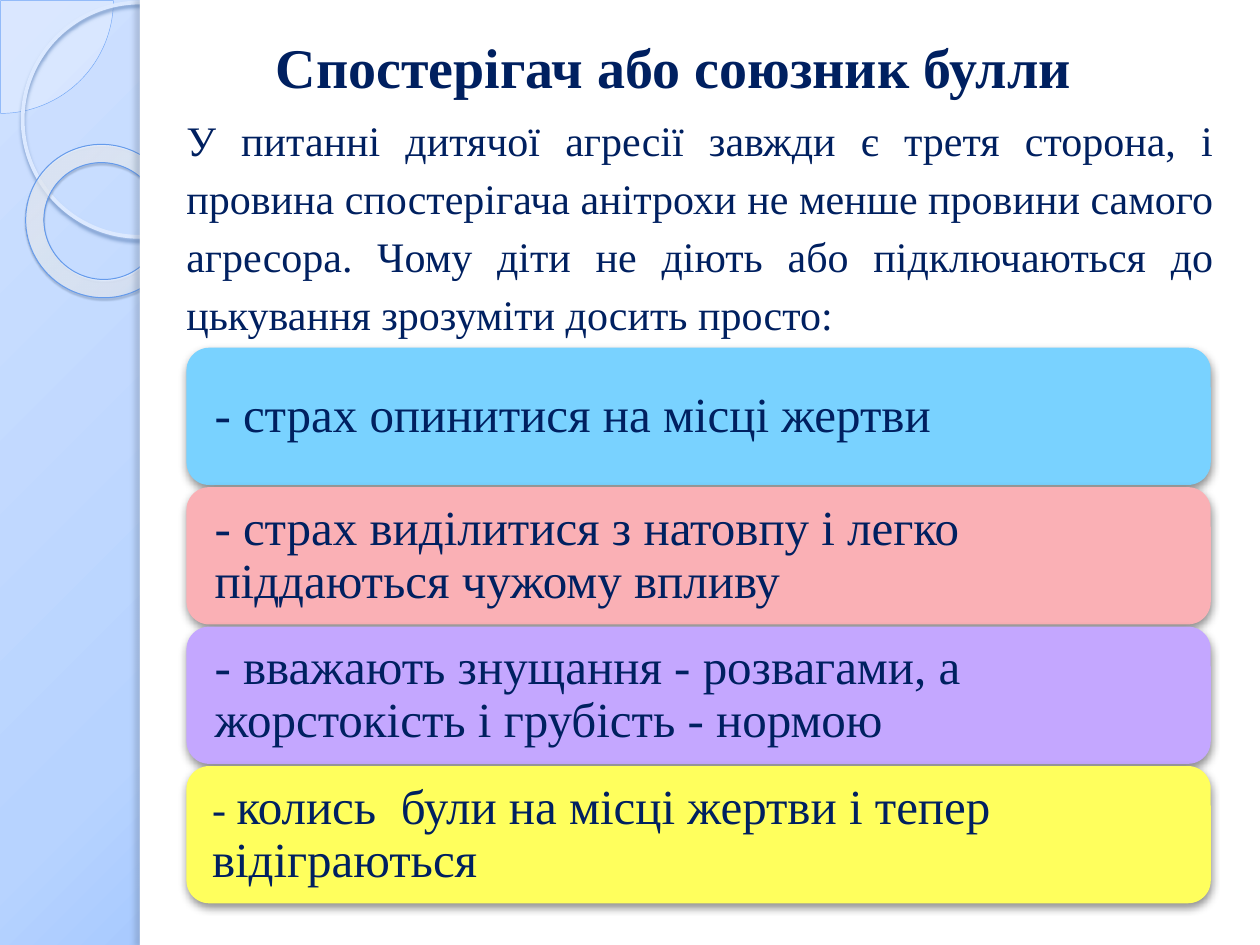
from dataclasses import dataclass
from pptx import Presentation
from pptx.dml.color import RGBColor
from pptx.enum.shapes import MSO_SHAPE as Kind
from pptx.enum.text import MSO_ANCHOR as Anchor, MSO_AUTO_SIZE as Fit, PP_ALIGN as Align
from pptx.oxml import parse_xml
from pptx.oxml.ns import nsdecls, qn
from pptx.util import Inches, Pt


@dataclass(frozen=True)
class Theme:
    font: str = "Times New Roman"
    ink: str = "002060"
    page: str = "FFFFFF"
    head: int = 32
    body: int = 24
    item: int = 28
    cards: tuple = ("79D2FF", "FAB0B5", "C4A7FF", "FFFF5D")
    sky: tuple = ((0, "CFE1FF", 100), (40, "B7D3FF", 100), (100, "4991FB", 100))
    ring: tuple = ((0, "F5F9FF", 70), (70, "FBFCFF", 55), (100, "75ACFF", 60))
    pie: str = "F2F6FF"
    edge: tuple = ("72A7F6", 0.25)
    hoop: tuple = ("DCE9FF", 2.15)
    rim: tuple = ("659BEC", 0.58)
    # Shadows: colour, opacity, blur, distance, angle
    glow: tuple = ("7193C6", 85, 2, 2, 90)
    soft: tuple = ("31486A", 35, 1, 1.2, 75)
    side: tuple = ("54647E", 25, 3, 3, 180)
    drop: tuple = ("000000", 43, 5, 2, 90)


@dataclass(frozen=True)
class Box:
    x: float
    y: float
    w: float
    h: float

    def cut(self, x, y, w, h):
        """Return a part of the box, given in percent of its sides."""
        return Box(self.x + self.w * x / 100, self.y + self.h * y / 100,
                   self.w * w / 100, self.h * h / 100)

    def place(self):
        return [Inches(v) for v in (self.x, self.y, self.w, self.h)]


THEME = Theme()
PAGE = Box(0, 0, 10, 7.5)
TITLE = "Спостерігач або союзник булли"
INTRO = ("У питанні дитячої агресії завжди є третя сторона, і провина спостерігача "
         "анітрохи не менше провини самого агресора. Чому діти не діють або "
         "підключаються до цькування зрозуміти досить просто:")
# Each item: size of the dash, side inset, words
ITEMS = (
    (THEME.item, 0.17, "страх опинитися на місці жертви"),
    (THEME.item, 0.17, "страх виділитися з натовпу і легко піддаються чужому впливу"),
    (THEME.item, 0.17, "вважають знущання - розвагами, а жорстокість і грубість - нормою"),
    (THEME.body, 0.15, "колись  були на місці жертви і тепер відіграються"),
)


def put(obj, **vals):
    for key, val in vals.items():
        setattr(obj, key, val)


def tint(hue, alpha):
    return f'<a:srgbClr val="{hue}"><a:alpha val="{alpha * 1000}"/></a:srgbClr>'


def blend(host, fill, stops, rect):
    """Fill with a round gradient; rect holds its centre edges in percent."""
    fill.gradient()
    old = host.element.find(".//" + qn("a:gradFill"))
    marks = "".join(f'<a:gs pos="{pos * 1000}">{tint(hue, alpha)}</a:gs>'
                    for pos, hue, alpha in stops)
    edges = " ".join(f'{side}="{val * 1000}"' for side, val in zip("ltrb", rect))
    old.getparent().replace(old, parse_xml(
        f'<a:gradFill {nsdecls("a")} rotWithShape="1"><a:gsLst>{marks}</a:gsLst>'
        f'<a:path path="circle"><a:fillToRect {edges}/></a:path></a:gradFill>'))


def shade(shape, hue, alpha, blur, dist, angle):
    old = shape.element.spPr.find(qn("a:effectLst"))
    old.append(parse_xml(
        f'<a:outerShdw {nsdecls("a")} blurRad="{Pt(blur)}" dist="{Pt(dist)}" '
        f'dir="{angle * 60000}" algn="tl" rotWithShape="0">{tint(hue, alpha)}</a:outerShdw>'))


def draw(slide, kind, box, fill=None, line=None, shadow=None, adj=()):
    shape = slide.shapes.add_shape(kind, *box.place())
    shape.shadow.inherit = False
    for i, val in enumerate(adj):
        shape.adjustments[i] = val
    if fill:
        shape.fill.solid()
        shape.fill.fore_color.rgb = RGBColor.from_string(fill)
    else:
        shape.fill.background()
    if line:
        shape.line.color.rgb = RGBColor.from_string(line[0])
        shape.line.width = Pt(line[1])
    else:
        shape.line.fill.background()
    if shadow:
        shade(shape, *shadow)
    return shape


def write(frame, runs, para, bold=None):
    """Fill the first paragraph with (words, size) runs."""
    line = frame.paragraphs[0]
    put(line, **para)
    for words, size in runs:
        run = line.add_run()
        run.text = words
        put(run.font, name=THEME.font, size=Pt(size), bold=bold)
        run.font.color.rgb = RGBColor.from_string(THEME.ink)


def side_art(slide, box):
    pie = draw(slide, Kind.PIE, box.cut(-80.2, -11.87, 161.3, 23.87),
               THEME.pie, THEME.edge, adj=(0, 54.02))
    hue = pie.element.spPr.find(qn("a:solidFill"))[0]
    hue.append(parse_xml(f'<a:alpha {nsdecls("a")} val="33000"/>'))
    draw(slide, Kind.OVAL, box.cut(16.2, 0.27, 167.6, 24.8),
         line=THEME.hoop, shadow=THEME.glow)
    ring = draw(slide, Kind.DONUT, box.cut(18, 15.33, 110.8, 16.13),
                line=THEME.rim, shadow=THEME.soft, adj=(0.12,))
    ring.rotation = 38.6
    blend(ring, ring.fill, THEME.ring, (-408, -50, 508, 150))


def panel(slide, box):
    draw(slide, Kind.RECTANGLE, box, THEME.page)
    draw(slide, Kind.RECTANGLE, box.cut(0, 0, 0.9, 100), THEME.page, shadow=THEME.side)


def note(slide, box, words, size, wrap=True, bold=None):
    frame = slide.shapes.add_textbox(*box.place()).text_frame
    put(frame, word_wrap=wrap, auto_size=Fit.SHAPE_TO_FIT_TEXT)
    write(frame, [(words, size)], dict(alignment=Align.JUSTIFY, line_spacing=1.15), bold)


def card_list(slide, box, gap=0.38):
    """Stack the cards evenly; gap is in percent of the box."""
    tall = (100 - gap * (len(ITEMS) - 1)) / len(ITEMS)
    for i, ((dash, inset, words), fill) in enumerate(zip(ITEMS, THEME.cards)):
        card = draw(slide, Kind.ROUNDED_RECTANGLE, box.cut(0, i * (tall + gap), 100, tall),
                    fill, shadow=THEME.drop)
        frame, pad = card.text_frame, Inches(inset)
        put(frame, word_wrap=True, vertical_anchor=Anchor.MIDDLE, margin_left=pad,
            margin_right=pad, margin_top=pad, margin_bottom=pad)
        runs = [("- " + words, dash)] if dash == THEME.item else [
            ("- ", dash), (words, THEME.item)]
        write(frame, runs, dict(alignment=Align.LEFT, line_spacing=0.9))


def main():
    deck = Presentation()
    put(deck, slide_width=Inches(PAGE.w), slide_height=Inches(PAGE.h))
    slide = deck.slides.add_slide(deck.slide_layouts[6])
    blend(slide, slide.background.fill, THEME.sky, (-24, -20, 124, 120))
    side_art(slide, PAGE.cut(0, 0, 11.1, 100))
    panel(slide, PAGE.cut(11.1, 0, 88.9, 100))
    note(slide, PAGE.cut(20.9, 1.73, 65.8, 8.93), TITLE, THEME.head, wrap=False, bold=True)
    card_list(slide, PAGE.cut(14.8, 36.8, 81.3, 58.8))
    note(slide, PAGE.cut(13.8, 10.67, 83.5, 26.13), INTRO, THEME.body)
    deck.save("out.pptx")


if __name__ == "__main__":
    main()
